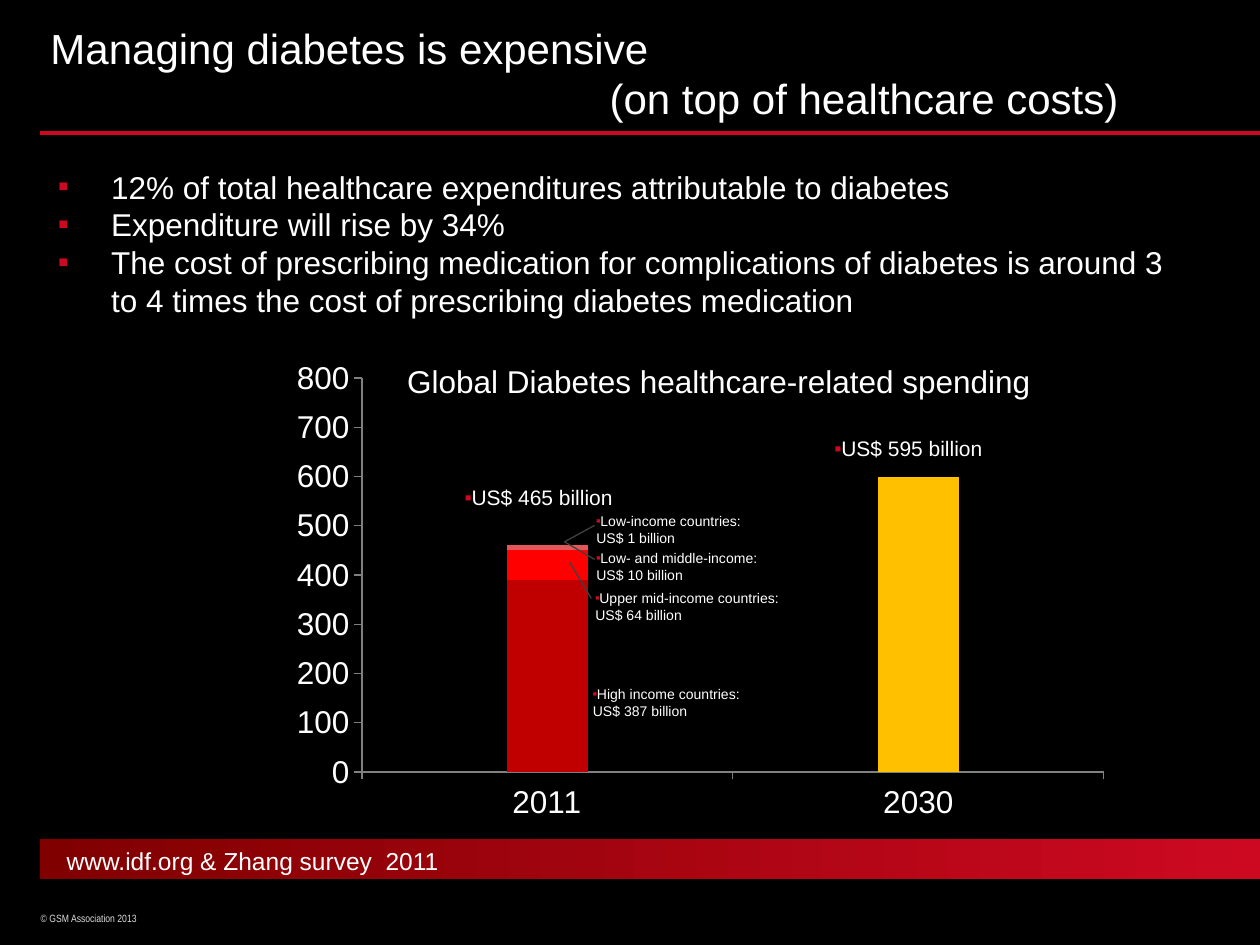
"""Build the slide on the cost of managing diabetes."""
import copy
from dataclasses import dataclass

import pptx
import pptx.chart.data
import pptx.dml.color
import pptx.enum.chart
import pptx.enum.dml
import pptx.enum.shapes
import pptx.enum.text
import pptx.oxml
import pptx.oxml.ns
import pptx.util

Pt = pptx.util.Pt
qn = pptx.oxml.ns.qn
ALIGN = pptx.enum.text.PP_ALIGN
KIND = pptx.enum.shapes.MSO_SHAPE
INK = {
    "black": "000000", "white": "FFFFFF", "pale": "DDDDDD", "red": "CD0921",
    "wine": "800000", "dark": "C00000", "gold": "FFC000", "bright": "FF0000",
    "rose": "E3575A", "gray": "808080", "lead": "404040",
}


@dataclass
class Note:
    """A block of text, with its place and size in points."""
    left: float
    top: float
    width: float
    height: float
    lines: tuple
    size: float
    align: ALIGN = ALIGN.LEFT
    bullet: bool = False
    hang: float = 0
    inset: float = 7.2
    shifts: tuple = ()
    wrap: bool = True
    face: str = "Arial"
    ink: str = "white"


@dataclass
class Line:
    """A straight line between two points."""
    ends: tuple
    ink: str
    width: float


@dataclass
class Part:
    """One stacked series of the chart."""
    name: str
    values: tuple
    ink: str


NOTES = [
    Note(22.6, 517.7, 112.3, 14.4, ("© GSM Association 2013",), 6,
         inset=0.7, face="Arial Narrow", ink="pale"),
    Note(26.5, 92.2, 650.2, 296.6, (
        "12% of total healthcare expenditures attributable to diabetes",
        "Expenditure will rise by 34%",
        "The cost of prescribing medication for complications of diabetes is "
        "around 3 to 4 times the cost of prescribing diabetes medication"),
        18, bullet=True, hang=30),
    Note(21.8, 9.2, 667.4, 34.6,
         ("Managing diabetes is expensive", "(on top of healthcare costs)"),
         24, shifts=(0, 319.5)),
    Note(439, 245.5, 160.6, 22.3, ("US$ 595 billion",), 12, ALIGN.CENTER, True),
    Note(227.7, 273.6, 160.6, 22.3, ("US$ 465 billion",), 12, ALIGN.CENTER, True),
    Note(331.7, 388.1, 124.6, 31.7,
         ("High income countries:\vUS$ 387 billion",), 8, bullet=True),
    Note(333.1, 333.4, 141.8, 31.7,
         ("Upper mid-income countries:\vUS$ 64 billion",), 8, bullet=True),
    Note(333.7, 310.5, 141.8, 31.7,
         ("Low- and middle-income:\vUS$ 10 billion",), 8, bullet=True),
    Note(333.7, 289.4, 141.8, 31.7,
         ("Low-income countries:\vUS$ 1 billion",), 8, bullet=True),
    Note(165.6, 203.4, 490.3, 61.9,
         ("Global Diabetes healthcare-related spending",), 18, ALIGN.CENTER),
    Note(31, 479.9, 236.9, 41, ("www.idf.org & Zhang survey  2011",), 14,
         wrap=False),
]
LINES = [
    Line((22.6, 75.9, 720, 75.9), "red", 2.25),
    Line((325.4, 321.1, 337.9, 342), "lead", 0.75),
    Line((322.6, 309.6, 339.8, 319.7), "lead", 0.75),
    Line((322.6, 309.6, 339.8, 300.2), "lead", 0.75),
]
PARTS = [
    Part("Series 1", (390, 600), "black"),
    Part("Series 2", (60, None), "bright"),
    Part("Series 3", (10, None), "rose"),
    Part("Series 4", (0, None), "gray"),
]
FRAME = {"x": 0.1, "y": 0.06, "w": 0.88, "h": 0.82}


def tint(name: str) -> pptx.dml.color.RGBColor:
    """Return the named colour."""
    return pptx.dml.color.RGBColor.from_string(INK[name])


def apply(target: object, values: dict) -> None:
    """Set each given attribute on the target."""
    for key, value in values.items():
        setattr(target, key, value)


def paint(fill: object, name: str) -> None:
    """Make a fill solid in the named colour."""
    fill.solid()
    fill.fore_color.rgb = tint(name)


def mark(para: object, hang: float) -> None:
    """Give a paragraph a small square red bullet."""
    props = para._p.get_or_add_pPr()
    props.set("marL", str(Pt(hang)))
    props.set("indent", str(-Pt(hang)))
    space = pptx.oxml.ns.nsdecls("a")
    for xml in (
            f'<a:buClr {space}><a:srgbClr val="{INK["red"]}"/></a:buClr>',
            f'<a:buSzPct {space} val="50000"/>',
            f'<a:buFont {space} typeface="Arial"/>',
            f'<a:buChar {space} char="■"/>'):
        props.append(pptx.oxml.parse_xml(xml))


def write(slide: object, note: Note) -> None:
    """Draw one block of text."""
    box = slide.shapes.add_textbox(
        *map(Pt, (note.left, note.top, note.width, note.height)))
    frame = box.text_frame
    apply(frame, {"word_wrap": note.wrap, "margin_left": Pt(note.inset)})
    for step, line in enumerate(note.lines):
        para = frame.paragraphs[0] if step == 0 else frame.add_paragraph()
        apply(para, {"text": line, "alignment": note.align})
        if note.bullet:
            mark(para, note.hang)
        if note.shifts:
            para._p.get_or_add_pPr().set("marL", str(Pt(note.shifts[step])))
        for run in para.runs:
            apply(run.font, {"size": Pt(note.size), "name": note.face})
            run.font.color.rgb = tint(note.ink)
        for gap in para._p.findall(qn("a:br")):
            gap.append(copy.deepcopy(para.runs[0]._r.rPr))


def block(slide: object, place: tuple) -> object:
    """Add a plain rectangle with no line or shadow."""
    shape = slide.shapes.add_shape(KIND.RECTANGLE, *map(Pt, place))
    shape.shadow.inherit = False
    shape.line.fill.background()
    return shape


def rule(slide: object, line: Line) -> None:
    """Draw one straight line."""
    wire = slide.shapes.add_connector(
        pptx.enum.shapes.MSO_CONNECTOR.STRAIGHT, *map(Pt, line.ends))
    wire.line.width = Pt(line.width)
    wire.line.color.rgb = tint(line.ink)
    wire._element.spPr.append(pptx.oxml.parse_xml(
        f'<a:effectLst {pptx.oxml.ns.nsdecls("a")}/>'))


def graph(slide: object) -> None:
    """Draw the stacked column chart."""
    data = pptx.chart.data.CategoryChartData()
    data.categories = ["2011", "2030"]
    for part in PARTS:
        data.add_series(part.name, part.values)
    chart = slide.shapes.add_chart(
        pptx.enum.chart.XL_CHART_TYPE.COLUMN_STACKED,
        *map(Pt, (158.6, 199.6, 481.8, 274.5)), data).chart
    apply(chart, {"has_legend": False, "has_title": False})
    apply(chart.font, {"size": Pt(18), "name": "Arial"})
    chart.font.color.rgb = tint("white")
    plot = chart.plots[0]
    apply(plot, {"gap_width": 360, "overlap": 100, "vary_by_categories": False})
    for series, part in zip(plot.series, PARTS):
        paint(series.format.fill, part.ink)
    for spot, name in enumerate(("dark", "gold")):
        paint(plot.series[0].points[spot].format.fill, name)
    apply(chart.value_axis, {"minimum_scale": 0, "maximum_scale": 800,
                             "major_unit": 100})
    for axis in (chart.category_axis, chart.value_axis):
        apply(axis, {"has_major_gridlines": False,
                     "major_tick_mark": pptx.enum.chart.XL_TICK_MARK.OUTSIDE})
        axis.format.line.color.rgb = tint("gray")
        axis.format.line.width = Pt(0.75)
    area = chart._chartSpace.chart.plotArea
    for old in area.findall(qn("c:layout")):
        area.remove(old)
    modes = '<c:layoutTarget val="inner"/><c:xMode val="edge"/><c:yMode val="edge"/>'
    sizes = "".join(f'<c:{key} val="{val}"/>' for key, val in FRAME.items())
    area.insert(0, pptx.oxml.parse_xml(
        f'<c:layout {pptx.oxml.ns.nsdecls("c")}><c:manualLayout>'
        f'{modes}{sizes}</c:manualLayout></c:layout>'))


def main() -> None:
    """Build and save the slide."""
    deck = pptx.Presentation()
    apply(deck, {"slide_width": Pt(720), "slide_height": Pt(540)})
    slide = deck.slides.add_slide(deck.slide_layouts[6])
    paint(block(slide, (0, 0, 720, 540)).fill, "black")
    band = block(slide, (22.6, 479.5, 697.4, 23)).fill
    band.gradient()
    band.gradient_angle = 0
    for stop, name, spot in zip(band.gradient_stops, ("wine", "red"), (0, 1)):
        stop.color.rgb = tint(name)
        stop.position = spot
    graph(slide)
    for line in LINES:
        rule(slide, line)
    for note in NOTES:
        write(slide, note)
    deck.save("out.pptx")


if __name__ == "__main__":
    main()
